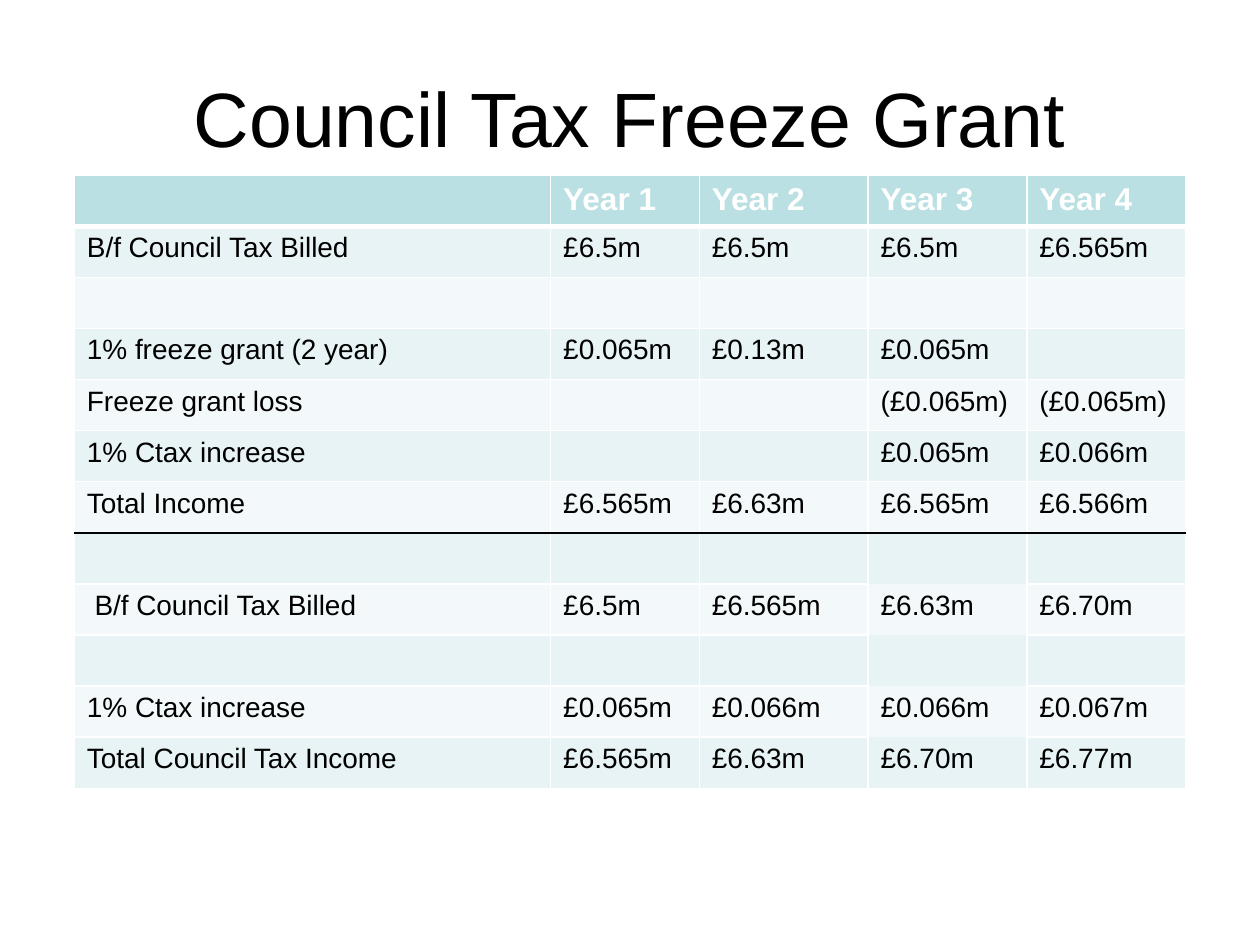
"""Build the Council Tax Freeze Grant slide with its four-year table."""
from lxml.etree import SubElement as Sub
from pptx import Presentation as Deck
from pptx.dml.color import RGBColor as RGB
from pptx.enum.text import MSO_ANCHOR as Anchor, PP_ALIGN as Align
from pptx.oxml.ns import qn
from pptx.util import Inches, Pt

HUES = {"head": "BBE0E3", "odd": "E7F3F4", "even": "F3F9FA",
        "white": "FFFFFF", "black": "000000"}
TITLE = "Council Tax Freeze Grant"
ROWS = [
    ("", "Year 1", "Year 2", "Year 3", "Year 4"),
    ("B/f Council Tax Billed", "£6.5m", "£6.5m", "£6.5m", "£6.565m"),
    ("", "", "", "", ""),
    ("1% freeze grant (2 year)", "£0.065m", "£0.13m", "£0.065m", ""),
    ("Freeze grant loss", "", "", "(£0.065m)", "(£0.065m)"),
    ("1% Ctax increase", "", "", "£0.065m", "£0.066m"),
    ("Total Income", "£6.565m", "£6.63m", "£6.565m", "£6.566m"),
    ("", "", "", "", ""),
    ("B/f Council Tax Billed", "£6.5m", "£6.565m", "£6.63m", "£6.70m"),
    ("", "", "", "", ""),
    ("1% Ctax increase", "£0.065m", "£0.066m", "£0.066m", "£0.067m"),
    ("Total Council Tax Income", "£6.565m", "£6.63m", "£6.70m", "£6.77m"),
]
WIDTHS = (3.78, 1.18, 1.34, 1.26, 1.26)
LEFT, TOP, HIGH = 0.59, 1.39, 4.87
TOTAL, LAST, OPEN, INDENT = 6, len(ROWS) - 1, 3, (8, 0)
HEAD = {"size": Pt(18), "bold": True, "name": "Arial"}
BODY = {"size": Pt(16), "bold": False, "name": "Arial"}
BIG = {"size": Pt(44), "name": "Arial"}


def style(font, look, hue):
    for key, val in look.items():
        setattr(font, key, val)
    font.color.rgb = RGB.from_string(HUES[hue])


def rule(edge, col):
    """Give the hue and width of the line below row number edge."""
    if edge == 0:
        return "white", 3
    if edge == TOTAL:
        return "black", 1
    if col == OPEN and TOTAL < edge < LAST:
        return None, 1
    return "white", 1


def border(cell, row, col):
    props = cell._tc.get_or_add_tcPr()
    sides = {"L": ("white", 1), "R": ("white", 1),
             "T": rule(row - 1, col), "B": rule(row, col)}
    for spot, (side, (hue, width)) in enumerate(sides.items()):
        line = Sub(props, qn(f"a:ln{side}"), w=str(Pt(width)))
        props.insert(spot, line)
        if hue:
            fill = Sub(line, qn("a:solidFill"))
            Sub(fill, qn("a:srgbClr"), val=HUES[hue])
        else:
            Sub(line, qn("a:noFill"))


def add_title(slide):
    box = slide.shapes.add_textbox(*map(Inches, (0.5, 0.3, 9, 1.25)))
    frame = box.text_frame
    frame.word_wrap, frame.vertical_anchor = True, Anchor.MIDDLE
    para = frame.paragraphs[0]
    para.text, para.alignment = TITLE, Align.CENTER
    style(para.font, BIG, "black")


def add_grid(slide):
    place = map(Inches, (LEFT, TOP, sum(WIDTHS), HIGH))
    table = slide.shapes.add_table(len(ROWS), len(WIDTHS), *place).table
    for col, width in zip(table.columns, WIDTHS):
        col.width = Inches(width)
    for row, words in enumerate(ROWS):
        band = "odd" if row % 2 else "even" if row else "head"
        table.rows[row].height = Inches(HIGH / len(ROWS))
        for col, word in enumerate(words):
            cell = table.cell(row, col)
            cell.text = word
            cell.fill.solid()
            cell.fill.fore_color.rgb = RGB.from_string(HUES[band])
            border(cell, row, col)
            if (row, col) == INDENT:
                cell.margin_left = Inches(0.16)
            look, hue = (BODY, "black") if row else (HEAD, "white")
            style(cell.text_frame.paragraphs[0].font, look, hue)


def main():
    deck = Deck()
    deck.slide_width, deck.slide_height = Inches(10), Inches(7.5)
    slide = deck.slides.add_slide(deck.slide_layouts[6])
    add_title(slide)
    add_grid(slide)
    deck.save("out.pptx")


if __name__ == "__main__":
    main()
